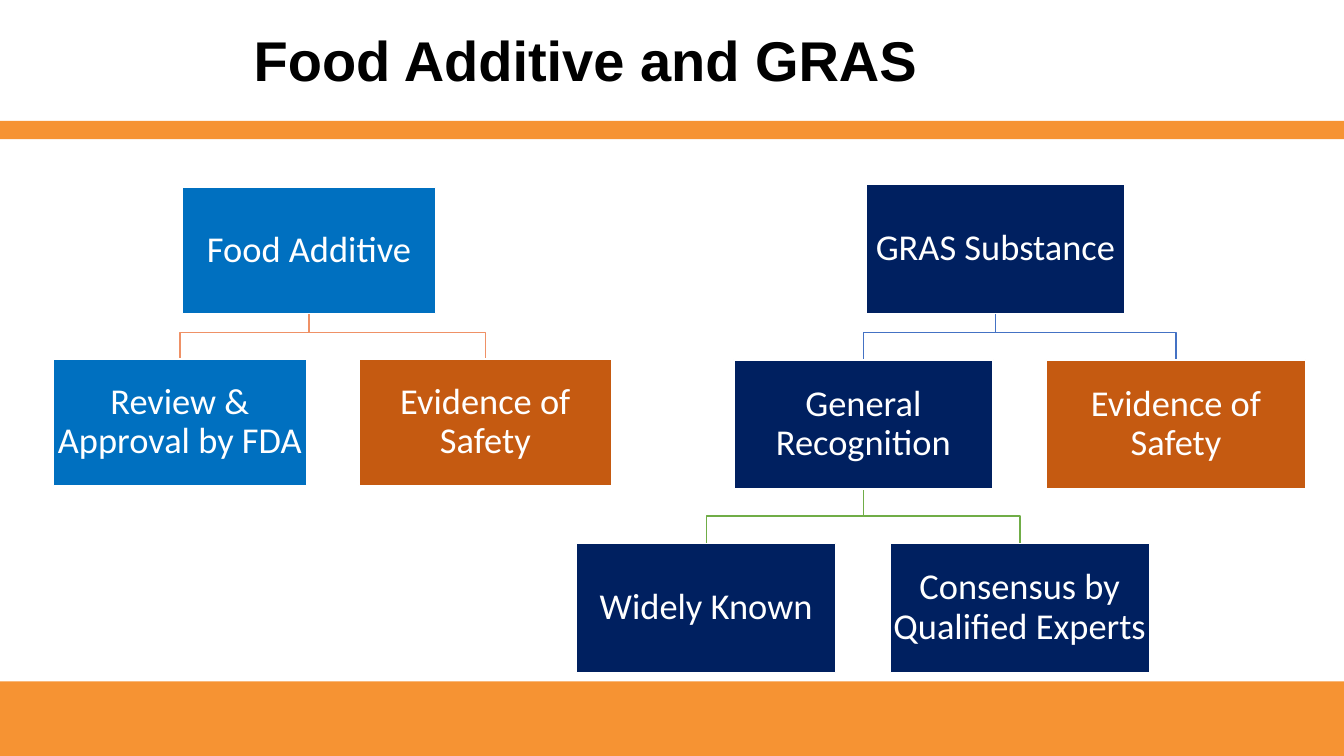
from pptx import Presentation
from pptx.dml.color import RGBColor
from pptx.enum.shapes import MSO_SHAPE
from pptx.enum.text import MSO_ANCHOR, MSO_AUTO_SIZE, PP_ALIGN
from pptx.util import Inches, Pt

ORANGE, BLUE, NAVY, RUST = "F69333", "0070C0", "002060", "C55A11"
WHITE, BLACK = "FFFFFF", "000000"
SALMON_LINE, BLUE_LINE, GREEN_LINE = "EF9166", "4472C4", "70AD47"


def color(value):
    return RGBColor.from_string(value)


class TreeSlide:
    columns = rows = 100
    heading_font, body_font = "Arial", "Calibri"
    heading_size, body_size = Pt(40), Pt(26)
    line_width = Pt(1)
    box_inset = Inches(0.02)

    def __init__(self, presentation):
        self.width = presentation.slide_width
        self.height = presentation.slide_height
        self.slide = presentation.slides.add_slide(presentation.slide_layouts[5])

    def x(self, column):
        return round(self.width * column / self.columns)

    def y(self, row):
        return round(self.height * row / self.rows)

    def label(self, shape, text, font_name, size, font_color, bold=False):
        frame = shape.text_frame
        frame.word_wrap = True
        frame.auto_size = MSO_AUTO_SIZE.NONE
        frame.vertical_anchor = MSO_ANCHOR.MIDDLE
        paragraph = frame.paragraphs[0]
        paragraph.alignment = PP_ALIGN.CENTER
        paragraph.line_spacing = 0.9
        run = paragraph.add_run()
        run.text = text
        run.font.name = font_name
        run.font.size = size
        run.font.bold = bold
        run.font.color.rgb = color(font_color)

    def title(self, text, left, top, width, height):
        shape = self.slide.shapes.title
        shape.left, shape.top = self.x(left), self.y(top)
        shape.width, shape.height = self.x(width), self.y(height)
        self.label(shape, text, self.heading_font, self.heading_size, BLACK, True)

    def rectangle(self, left, top, width, height, fill):
        shape = self.slide.shapes.add_shape(
            MSO_SHAPE.RECTANGLE, self.x(left), self.y(top), self.x(width), self.y(height))
        shape.shadow.inherit = False
        shape.fill.solid()
        shape.fill.fore_color.rgb = color(fill)
        return shape

    def bar(self, top, height):
        self.rectangle(0, top, self.columns, height, ORANGE).line.fill.background()

    def box(self, text, center, top, width, height, fill):
        shape = self.rectangle(center - width / 2, top, width, height, fill)
        shape.line.color.rgb = color(WHITE)
        shape.line.width = self.line_width
        frame = shape.text_frame
        frame.margin_left = frame.margin_right = self.box_inset
        frame.margin_top = frame.margin_bottom = self.box_inset
        self.label(shape, text, self.body_font, self.body_size, WHITE)

    def elbow(self, start, bend, end, line_color):
        (start_column, start_row), (end_column, end_row) = start, end
        builder = self.slide.shapes.build_freeform(self.x(start_column), self.y(start_row))
        corners = [(start_column, bend), (end_column, bend), (end_column, end_row)]
        builder.add_line_segments(
            [(self.x(column), self.y(row)) for column, row in corners], close=False)
        shape = builder.convert_to_shape()
        shape.shadow.inherit = False
        shape.fill.background()
        shape.line.color.rgb = color(line_color)
        shape.line.width = self.line_width

    def tree(self, boxes, branches, width, height):
        for parent, children, bend, line_color in branches:
            _, center, top, _ = boxes[parent]
            for child in children:
                _, child_center, child_top, _ = boxes[child]
                self.elbow((center, top + height), bend, (child_center, child_top), line_color)
        for text, center, top, fill in boxes.values():
            self.box(text, center, top, width, height, fill)


def main():
    presentation = Presentation()
    presentation.slide_width = Inches(13.33)
    presentation.slide_height = Inches(7.5)
    slide = TreeSlide(presentation)
    slide.bar(90.13, 9.87)
    slide.bar(16, 2.4)
    slide.title("Food Additive and GRAS", 1.65, 2.27, 83.8, 12.27)

    additive_boxes = {
        "additive": ("Food Additive", 23, 24.8, BLUE),
        "review": ("Review & Approval by FDA", 13.39, 47.5, BLUE),
        "evidence": ("Evidence of Safety", 36.12, 47.5, RUST),
    }
    additive_branches = [("additive", ("review", "evidence"), 44, SALMON_LINE)]
    slide.tree(additive_boxes, additive_branches, 18.83, 16.7)

    gras_boxes = {
        "gras": ("GRAS Substance", 74.08, 24.4, NAVY),
        "recognition": ("General Recognition", 64.25, 47.6, NAVY),
        "known": ("Widely Known", 52.55, 71.87, NAVY),
        "consensus": ("Consensus by Qualified Experts", 75.88, 71.87, NAVY),
        "evidence": ("Evidence of Safety", 87.51, 47.6, RUST),
    }
    gras_branches = [
        ("gras", ("recognition", "evidence"), 44, BLUE_LINE),
        ("recognition", ("known", "consensus"), 68.27, GREEN_LINE),
    ]
    slide.tree(gras_boxes, gras_branches, 19.28, 17.07)
    presentation.save("out.pptx")


if __name__ == "__main__":
    main()
